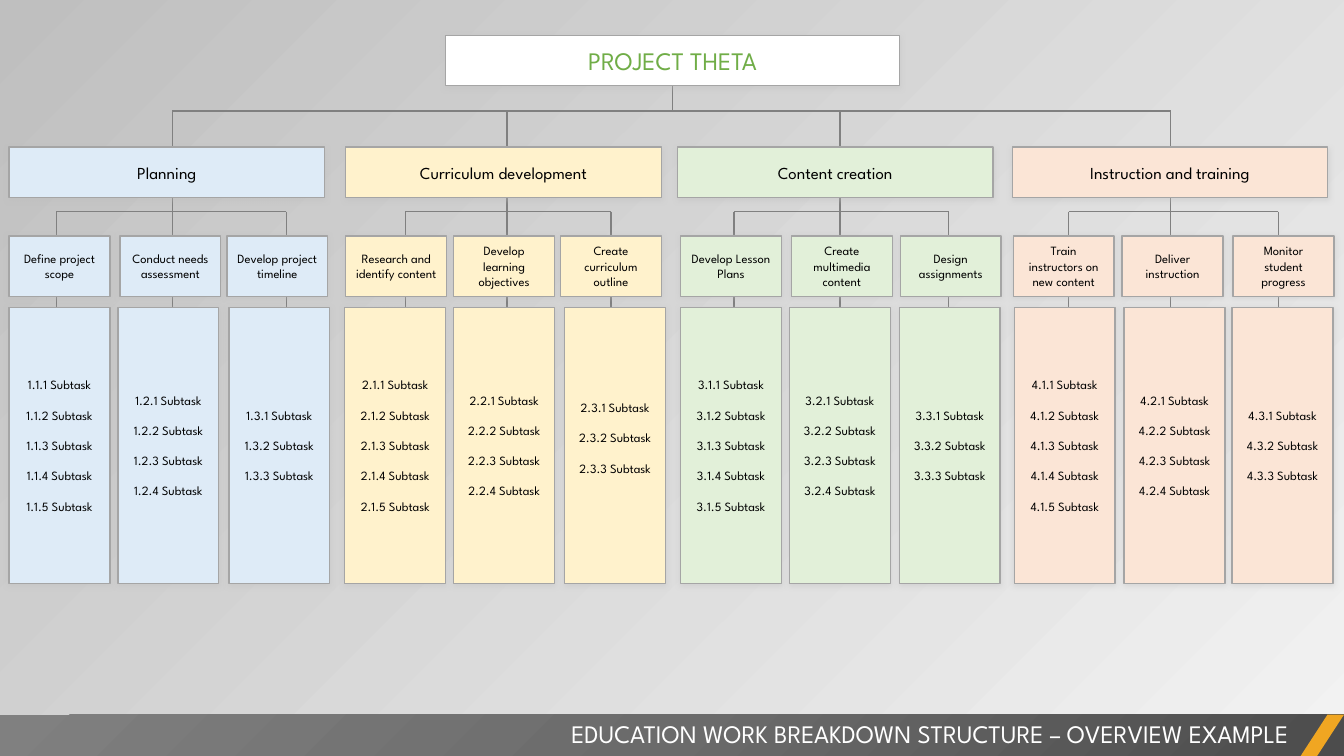
from lxml.etree import SubElement
from pptx import Presentation
from pptx.dml.color import RGBColor
from pptx.enum.shapes import MSO_CONNECTOR, MSO_SHAPE
from pptx.enum.text import MSO_ANCHOR, PP_ALIGN
from pptx.oxml import parse_xml
from pptx.oxml.ns import nsdecls, qn
from pptx.util import Inches, Pt

FONT = "League Spartan"
COLORS = {
    "black": "000000", "white": "FFFFFF", "title": "70AD47",
    "border": "A5A5A5", "connector": "808080", "shadow": "BFBFBF",
    "blue": "DEEBF7", "yellow": "FFF2CC", "green": "E2F0D9", "orange": "FBE5D6",
    "background_light": "F2F2F2", "background_dark": "BFBFBF",
    "bar_dark": "4C4C4C", "bar_middle": "6B6B6B", "bar_light": "808080",
    "accent": "F0A622",
}
TITLE = "PROJECT THETA"
FOOTER = "EDUCATION WORK BREAKDOWN STRUCTURE – OVERVIEW EXAMPLE"
SUBTASK_COUNTS = (5, 4, 3)
PHASES = [
    {"name": "Planning", "color": "blue", "left": 0.09,
     "drops": (0.56, 1.71, 2.84),
     "tasks": [("Define project scope", 0.09, 0.09),
               ("Conduct needs assessment", 1.19, 1.17),
               ("Develop project timeline", 2.25, 2.27)]},
    {"name": "Curriculum development", "color": "yellow", "left": 3.43,
     "drops": (4.02, 5.03, 6.06),
     "tasks": [("Research and identify content", 3.43, 3.42),
               ("Develop learning objectives", 4.5, 4.5),
               ("Create curriculum outline", 5.56, 5.6)],
     "raised_column": 3},
    {"name": "Content creation", "color": "green", "left": 6.72,
     "drops": (7.28, 8.33, 9.41),
     "tasks": [("Develop Lesson Plans", 6.75, 6.75),
               ("Create multimedia content", 7.85, 7.83),
               ("Design assignments", 8.93, 8.92)]},
    {"name": "Instruction and training", "color": "orange", "left": 10.04,
     "drops": (10.6, 11.61, 12.68),
     "tasks": [("Train instructors on new content", 10.05, 10.06),
               ("Deliver instruction", 11.13, 11.15),
               ("Monitor student progress", 12.23, 12.22)]},
]
SLIDE_WIDTH, SLIDE_HEIGHT = 13.33, 7.5
TRUNK_X, TRUNK_TOP, PHASE_RAIL, TASK_RAIL, DROP_BOTTOM = 6.67, 0.59, 1.1, 2.1, 3.33
PHASE_TOP, TASK_TOP, SUBTASK_TOP = 1.46, 2.34, 3.05
BAR_TOP, ACCENT_WIDTH = 7.09, 0.43


def rgb(name):
    return RGBColor.from_string(COLORS[name])


def add_line(slide, x1, y1, x2, y2):
    line = slide.shapes.add_connector(
        MSO_CONNECTOR.STRAIGHT, Inches(x1), Inches(y1), Inches(x2), Inches(y2))
    line.line.color.rgb = rgb("connector")
    line.line.width = Pt(1)
    SubElement(line._element.spPr, qn("a:effectLst"))


def add_plain_shape(slide, kind, left, top, width, height, color):
    shape = slide.shapes.add_shape(
        kind, Inches(left), Inches(top), Inches(width), Inches(height))
    shape.shadow.inherit = False
    shape.fill.solid()
    shape.fill.fore_color.rgb = rgb(color)
    shape.line.fill.background()
    return shape


def write_lines(frame, lines, size, color, alignment):
    frame.word_wrap = True
    for index, text in enumerate(lines):
        paragraph = frame.add_paragraph() if index else frame.paragraphs[0]
        paragraph.text = text
        paragraph.alignment = alignment
        paragraph.space_before = Pt(10.8 if index else 0)
        paragraph.font.name = FONT
        paragraph.font.size = Pt(size)
        paragraph.font.color.rgb = rgb(color)


def add_box(slide, left, top, width, height, color, lines, size, text_color="black"):
    box = add_plain_shape(slide, MSO_SHAPE.RECTANGLE, left, top, width, height, color)
    box.line.color.rgb = rgb("border")
    box.line.width = Pt(1)
    effects = box._element.spPr.find(qn("a:effectLst"))
    effects.append(parse_xml(
        f'<a:outerShdw {nsdecls("a")} blurRad="{Pt(4)}" dist="{Pt(1)}" dir="5400000" '
        f'algn="t" rotWithShape="0"><a:srgbClr val="{COLORS["shadow"]}">'
        '<a:alpha val="40000"/></a:srgbClr></a:outerShdw>'))
    box.text_frame.vertical_anchor = MSO_ANCHOR.MIDDLE
    write_lines(box.text_frame, lines, size, text_color, PP_ALIGN.CENTER)
    return box


def add_connectors(slide):
    stems = [phase["drops"][1] for phase in PHASES]
    add_line(slide, TRUNK_X, TRUNK_TOP, TRUNK_X, PHASE_RAIL)
    add_line(slide, stems[0], PHASE_RAIL, stems[-1], PHASE_RAIL)
    for phase in PHASES:
        first, stem, last = phase["drops"]
        add_line(slide, first, TASK_RAIL, last, TASK_RAIL)
        for x, top in ((first, TASK_RAIL), (stem, PHASE_RAIL), (last, TASK_RAIL)):
            add_line(slide, x, top, x, DROP_BOTTOM)


def add_phase(slide, number, phase):
    color = phase["color"]
    add_box(slide, phase["left"], PHASE_TOP, 3.13, 0.5, color, [phase["name"]], 12)
    columns = zip(phase["tasks"], SUBTASK_COUNTS)
    for column, ((task, task_left, list_left), count) in enumerate(columns, 1):
        add_box(slide, task_left, TASK_TOP, 1, 0.6, color, [task], 9)
        subtasks = [f"{number}.{column}.{item} Subtask" for item in range(1, count + 1)]
        box = add_box(slide, list_left, SUBTASK_TOP, 1, 2.74, color, subtasks, 9)
        if column == phase.get("raised_column"):
            box.text_frame.margin_bottom = Inches(0.2)


def add_footer(slide):
    height = SLIDE_HEIGHT - BAR_TOP
    bar = add_plain_shape(
        slide, MSO_SHAPE.RECTANGLE, 0, BAR_TOP, SLIDE_WIDTH, height, "bar_dark")
    stops = "".join(
        f'<a:gs pos="{position}"><a:srgbClr val="{COLORS[name]}"/></a:gs>'
        for position, name in ((0, "bar_dark"), (50000, "bar_middle"), (100000, "bar_light")))
    properties = bar._element.spPr
    properties.replace(properties.find(qn("a:solidFill")), parse_xml(
        f'<a:gradFill {nsdecls("a")} rotWithShape="1"><a:gsLst>{stops}</a:gsLst>'
        '<a:path path="circle"><a:fillToRect l="100000" t="100000"/></a:path></a:gradFill>'))
    accent = add_plain_shape(slide, MSO_SHAPE.PARALLELOGRAM, SLIDE_WIDTH - ACCENT_WIDTH,
                             BAR_TOP, ACCENT_WIDTH, height, "accent")
    accent.adjustments[0] = 0.65
    caption = slide.shapes.add_textbox(Inches(4.3), Inches(7.08), Inches(8.58), Inches(0.4))
    write_lines(caption.text_frame, [FOOTER], 18, "white", PP_ALIGN.RIGHT)


def main():
    presentation = Presentation()
    presentation.slide_width = Inches(SLIDE_WIDTH)
    presentation.slide_height = Inches(SLIDE_HEIGHT)
    slide = presentation.slides.add_slide(presentation.slide_layouts[6])
    background = slide.background.fill
    background.gradient()
    background.gradient_angle = 135
    for stop, name in zip(background.gradient_stops, ("background_light", "background_dark")):
        stop.color.rgb = rgb(name)
    add_connectors(slide)
    add_box(slide, 4.42, 0.35, 4.5, 0.5, "white", [TITLE], 18, "title")
    for number, phase in enumerate(PHASES, 1):
        add_phase(slide, number, phase)
    add_footer(slide)
    presentation.save("out.pptx")


if __name__ == "__main__":
    main()
